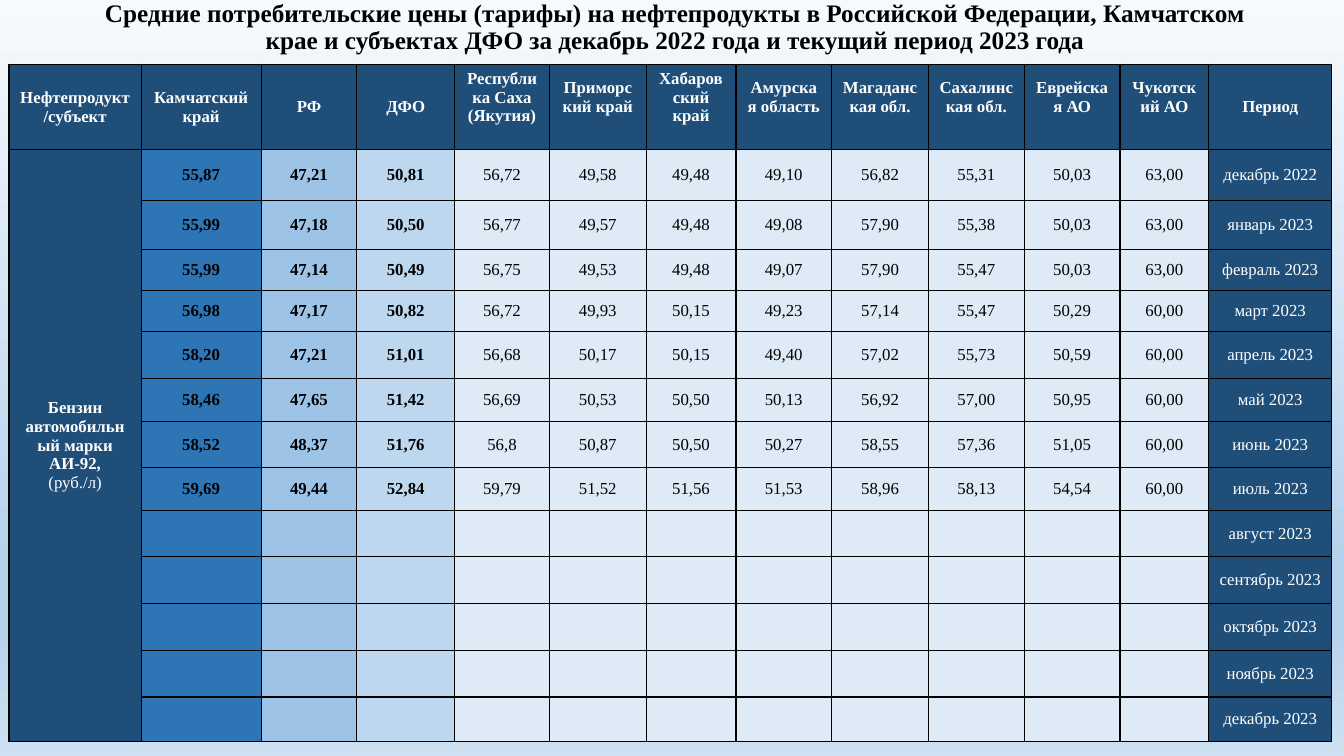
from lxml import etree
from pptx import Presentation
from pptx.dml.color import RGBColor
from pptx.enum.text import MSO_ANCHOR, MSO_AUTO_SIZE, PP_ALIGN
from pptx.oxml.ns import qn
from pptx.util import Inches, Pt

MIDDLE = MSO_ANCHOR.MIDDLE
CENTER = PP_ALIGN.CENTER
NO_AUTOFIT = MSO_AUTO_SIZE.NONE
TITLE_ONLY = 5
FONT = "Times New Roman"
COLORS = {
    "header": "1F4E79", "kamchatka": "2E75B6", "russia": "9DC3E6",
    "far_east": "BDD7EE", "region": "DEEBF7", "black": "000000", "white": "FFFFFF",
}
BACKGROUND_STOPS = [(0, "F7FAFD"), (74, "B5D2EC"), (83, "B5D2EC"), (100, "CEE1F2")]
TITLE = ("Средние потребительские цены (тарифы) на нефтепродукты в Российской Федерации, "
         "Камчатском крае и субъектах ДФО за декабрь 2022 года и текущий период 2023 года")
HEADINGS = [
    "Нефтепродукт/субъект", "Камчатский край", "РФ", "ДФО", "Республика Саха (Якутия)",
    "Приморский край", "Хабаровский край", "Амурская область", "Магаданская обл.",
    "Сахалинская обл.", "Еврейская АО", "Чукотский АО", "Период",
]
PRODUCT = [("Бензин автомобильный марки", True), ("АИ-92,", True), ("(руб./л)", False)]
PRICES = [
    ("декабрь 2022", "55,87 47,21 50,81 56,72 49,58 49,48 49,10 56,82 55,31 50,03 63,00"),
    ("январь 2023", "55,99 47,18 50,50 56,77 49,57 49,48 49,08 57,90 55,38 50,03 63,00"),
    ("февраль 2023", "55,99 47,14 50,49 56,75 49,53 49,48 49,07 57,90 55,47 50,03 63,00"),
    ("март 2023", "56,98 47,17 50,82 56,72 49,93 50,15 49,23 57,14 55,47 50,29 60,00"),
    ("апрель 2023", "58,20 47,21 51,01 56,68 50,17 50,15 49,40 57,02 55,73 50,59 60,00"),
    ("май 2023", "58,46 47,65 51,42 56,69 50,53 50,50 50,13 56,92 57,00 50,95 60,00"),
    ("июнь 2023", "58,52 48,37 51,76 56,8 50,87 50,50 50,27 58,55 57,36 51,05 60,00"),
    ("июль 2023", "59,69 49,44 52,84 59,79 51,52 51,56 51,53 58,96 58,13 54,54 60,00"),
    ("август 2023", ""), ("сентябрь 2023", ""), ("октябрь 2023", ""),
    ("ноябрь 2023", ""), ("декабрь 2023", ""),
]
COLUMN_FILLS = ["header", "kamchatka", "russia", "far_east"] + ["region"] * 8 + ["header"]
COLUMN_WIDTHS = [1.31, 1.19, 0.95, 0.97, 0.94, 0.96, 0.89, 0.95, 0.96, 0.95, 0.95, 0.88, 1.22]
ROW_HEIGHTS = [0.84, 0.5, 0.49, 0.41, 0.4, 0.47, 0.43, 0.45, 0.43, 0.46, 0.46, 0.47, 0.46, 0.44]


def paint_background(slide):
    """Fill the slide with the vertical blue gradient."""
    fill = slide.background.fill
    fill.gradient()
    fill.gradient_angle = 270
    stops = slide.element.find(".//" + qn("a:gsLst"))
    for stop in list(stops):
        stops.remove(stop)
    for percent, color in BACKGROUND_STOPS:
        stop = etree.SubElement(stops, qn("a:gs"), pos=str(percent * 1000))
        etree.SubElement(stop, qn("a:srgbClr"), val=color)


def add_text(paragraph, text, size, color, bold):
    """Add one centred run to a paragraph."""
    paragraph.alignment = CENTER
    run = paragraph.add_run()
    run.text = text
    run.font.name = FONT
    run.font.size = Pt(size)
    run.font.bold = bold
    run.font.color.rgb = RGBColor.from_string(COLORS[color])


def place_title(slide, left, top, width, height):
    """Place and format the title placeholder in its box."""
    title = slide.shapes.title
    title.left, title.top = Inches(left), Inches(top)
    title.width, title.height = Inches(width), Inches(height)
    frame = title.text_frame
    frame.word_wrap = True
    frame.auto_size = NO_AUTOFIT
    frame.vertical_anchor = MIDDLE
    frame.paragraphs[0].line_spacing = 0.9
    add_text(frame.paragraphs[0], TITLE, 18, "black", True)


def style_cell(cell, fill):
    """Give a cell its fill, middle anchor and thin black borders."""
    cell.vertical_anchor = MIDDLE
    cell.fill.solid()
    cell.fill.fore_color.rgb = RGBColor.from_string(COLORS[fill])
    properties = cell._tc.get_or_add_tcPr()
    for index, side in enumerate(("a:lnL", "a:lnR", "a:lnT", "a:lnB")):
        border = etree.Element(qn(side), w=str(Pt(1)))
        solid = etree.SubElement(border, qn("a:solidFill"))
        etree.SubElement(solid, qn("a:srgbClr"), val=COLORS["black"])
        properties.insert(index, border)


def add_price_table(slide, left, top):
    """Build the price table from its top left corner."""
    table = slide.shapes.add_table(
        len(ROW_HEIGHTS), len(COLUMN_WIDTHS), Inches(left), Inches(top),
        Inches(sum(COLUMN_WIDTHS)), Inches(sum(ROW_HEIGHTS))).table
    table.first_row = False
    table.horz_banding = False
    for column, width in zip(table.columns, COLUMN_WIDTHS):
        column.width = Inches(width)
    for row, height in zip(table.rows, ROW_HEIGHTS):
        row.height = Inches(height)
    for row_index in range(len(ROW_HEIGHTS)):
        for column_index, fill in enumerate(COLUMN_FILLS):
            style_cell(table.cell(row_index, column_index), fill if row_index else "header")

    for column_index, heading in enumerate(HEADINGS):
        cell = table.cell(0, column_index)
        if COLUMN_FILLS[column_index] == "region":
            cell.margin_bottom = Inches(0.24)
        add_text(cell.text_frame.paragraphs[0], heading, 12, "white", True)

    product = table.cell(1, 0)
    product.merge(table.cell(len(PRICES), 0))
    for index, (line, bold) in enumerate(PRODUCT):
        frame = product.text_frame
        paragraph = frame.add_paragraph() if index else frame.paragraphs[0]
        add_text(paragraph, line, 12, "white", bold)

    for row_index, (period, prices) in enumerate(PRICES, 1):
        for column_index, price in enumerate(prices.split(), 1):
            paragraph = table.cell(row_index, column_index).text_frame.paragraphs[0]
            add_text(paragraph, price, 12, "black", COLUMN_FILLS[column_index] != "region")
        period_cell = table.cell(row_index, len(HEADINGS) - 1)
        add_text(period_cell.text_frame.paragraphs[0], period, 12, "white", False)


def main():
    """Create the presentation and save it."""
    deck = Presentation()
    deck.slide_width, deck.slide_height = Inches(13.33), Inches(7.5)
    slide = deck.slides.add_slide(deck.slide_layouts[TITLE_ONLY])
    paint_background(slide)
    place_title(slide, 0.92, 0, 11.55, 0.55)
    add_price_table(slide, 0.09, 0.64)
    deck.save("out.pptx")


if __name__ == "__main__":
    main()
